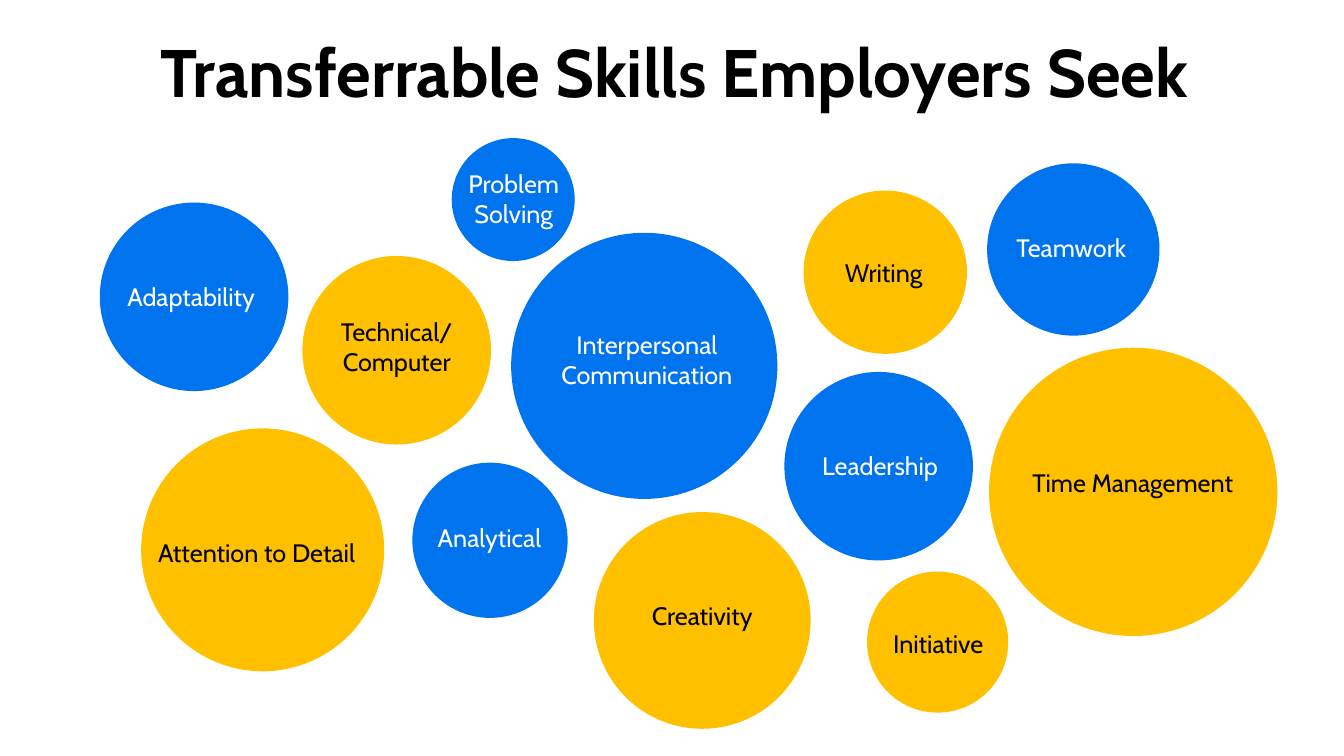
"""Build a slide of skill bubbles that employers seek."""
from dataclasses import dataclass

from pptx import Presentation
from pptx import util as u
from pptx.dml.color import RGBColor
from pptx.enum import shapes, text


@dataclass(frozen=True)
class Theme:
    font: str = "Cabin"
    blue: str = "0073EF"
    gold: str = "FFC000"
    white: str = "FFFFFF"
    black: str = "000000"
    head: int = 48
    label: int = 18


class Deck:
    def __init__(self, theme):
        self.theme = theme
        self.prs = Presentation()
        self.prs.slide_width = u.Inches(13.33)
        self.prs.slide_height = u.Inches(7.5)
        self.slide = self.prs.slides.add_slide(self.prs.slide_layouts[5])

    def label(self, frame, words, size, color, align, bold=False):
        frame.word_wrap = True
        frame.auto_size = text.MSO_AUTO_SIZE.NONE
        frame.text = words
        para = frame.paragraphs[0]
        para.alignment = align
        font = para.font
        font.name, font.size, font.bold = self.theme.font, u.Pt(size), bold
        font.color.rgb = RGBColor.from_string(color)

    def title(self, words, x, y, w, h):
        box = self.slide.shapes.title
        box.left, box.top, box.width, box.height = map(u.Inches, (x, y, w, h))
        self.label(box.text_frame, words, self.theme.head, self.theme.black,
                   text.PP_ALIGN.CENTER, True)
        box.text_frame.vertical_anchor = text.MSO_ANCHOR.TOP

    def bubble(self, words, fill, disc, place, lines=1, align=text.PP_ALIGN.CENTER):
        group = self.slide.shapes.add_group_shape()
        x, y, size = map(u.Inches, disc)
        oval = group.shapes.add_shape(shapes.MSO_SHAPE.OVAL, x, y, size, size)
        oval.shadow.inherit = False
        oval.fill.solid()
        oval.fill.fore_color.rgb = RGBColor.from_string(fill)
        oval.line.fill.background()
        x, y, w = map(u.Inches, place)
        box = group.shapes.add_textbox(x, y, w, u.Inches(0.09 + 0.31 * lines))
        ink = self.theme.white if fill == self.theme.blue else self.theme.black
        self.label(box.text_frame, words, self.theme.label, ink, align)


def main():
    theme = Theme()
    deck = Deck(theme)
    deck.title("Transferrable Skills Employers Seek", 0.03, 0.25, 13.32, 0.91)
    blue, gold = theme.blue, theme.gold
    skills = [
        ("Adaptability", blue, (0.99, 2.01, 1.87), (1.12, 2.74, 1.55)),
        ("Leadership", blue, (7.78, 3.69, 1.87), (7.91, 4.42, 1.64)),
        ("Analytical", blue, (4.09, 4.59, 1.54), (4.22, 5.13, 1.27)),
        ("Teamwork", blue, (9.79, 1.62, 1.71), (9.9, 2.26, 1.45)),
        ("Interpersonal Communication", blue, (5.07, 2.31, 2.64), (5.37, 3.22, 2.09), 2),
        ("Technical/\vComputer", gold, (3, 2.54, 1.87), (3.05, 3.09, 1.77), 2),
        ("Writing", gold, (7.97, 1.89, 1.62), (8.01, 2.5, 1.51)),
        ("Attention to Detail", gold, (1.4, 4.25, 2.41), (1.47, 5.28, 2.31), 1,
         text.PP_ALIGN.LEFT),
        ("Creativity", gold, (5.89, 5.08, 2.15), (5.93, 5.91, 2.07)),
        ("Time Management", gold, (9.81, 3.45, 2.86), (9.92, 4.59, 2.63)),
        ("Initiative", gold, (8.6, 5.67, 1.4), (8.7, 6.18, 1.21)),
        ("Problem\vSolving", blue, (4.48, 1.37, 1.22), (4.05, 1.62, 2.09), 2),
    ]
    for skill in skills:
        deck.bubble(*skill)
    deck.prs.save("out.pptx")


if __name__ == "__main__":
    main()
